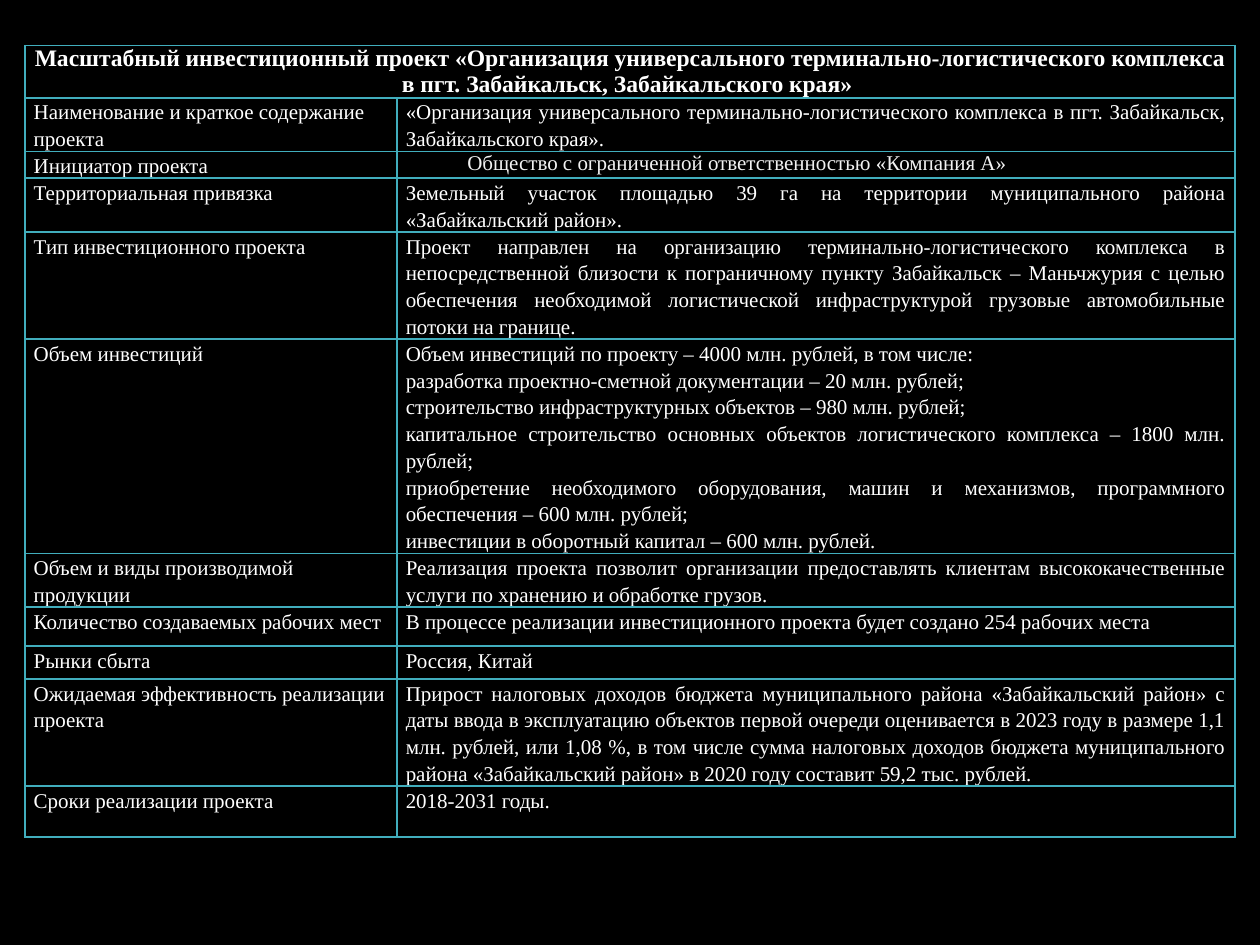
from dataclasses import dataclass

from lxml.etree import SubElement
from pptx import Presentation
from pptx.dml.color import RGBColor
from pptx.enum.text import MSO_ANCHOR as Anchor, PP_ALIGN as Align
from pptx.oxml.ns import qn
from pptx.table import _Cell as Cell
from pptx.util import Cm, Pt


@dataclass(frozen=True)
class Theme:
    background: str = "000000"
    text: str = "FFFFFF"
    soft_text: str = "F2F2F2"
    border: str = "41AEBD"
    font: str = "Times New Roman"
    heading_size: float = 13.5
    body_size: float = 12
    border_width: float = 1
    body_spacing: float = 1.15


THEME = Theme()


@dataclass(frozen=True)
class CellStyle:
    align: Align = Align.LEFT
    size: float = THEME.body_size
    bold: bool = False
    color: str = THEME.text
    spacing: float = THEME.body_spacing
    margin: float = 0.18
    indent: float = 0


@dataclass(frozen=True)
class ProjectRow:
    height: float
    label: str
    details: tuple[str, ...]
    style: CellStyle = CellStyle(align=Align.JUSTIFY)


HEADING = (
    "Масштабный инвестиционный проект «Организация универсального "
    "терминально-логистического комплекса в пгт. Забайкальск, Забайкальского края» "
)
HEADING_HEIGHT = 0.76
HEADING_STYLE = CellStyle(Align.CENTER, THEME.heading_size, True, spacing=1.0, margin=0.2)
LABEL_STYLE = CellStyle()
INITIATOR_STYLE = CellStyle(Align.JUSTIFY, color=THEME.soft_text, spacing=1.0, indent=1.24)
COLUMN_WIDTHS = (7.5, 16.9)

ROWS = (
    ProjectRow(0.61, "Наименование и краткое содержание проекта", (
        "«Организация универсального терминально-логистического комплекса "
        "в пгт. Забайкальск, Забайкальского края».",
    )),
    ProjectRow(0.41, "Инициатор проекта", (
        "Общество с ограниченной ответственностью «Компания А»",
    ), INITIATOR_STYLE),
    ProjectRow(0.79, "Территориальная привязка", (
        "Земельный участок площадью 39 га на территории муниципального района "
        "«Забайкальский район».",
    )),
    ProjectRow(0.66, "Тип инвестиционного проекта", (
        "Проект направлен на организацию терминально-логистического комплекса "
        "в непосредственной близости к пограничному пункту Забайкальск – Маньчжурия "
        "с целью обеспечения необходимой логистической инфраструктурой грузовые "
        "автомобильные потоки на границе.",
    )),
    ProjectRow(0.66, "Объем инвестиций", (
        "Объем инвестиций по проекту – 4000 млн. рублей, в том числе:",
        "разработка проектно-сметной документации – 20 млн. рублей;",
        "строительство инфраструктурных объектов – 980 млн. рублей;",
        "капитальное строительство основных объектов логистического комплекса "
        "– 1800 млн. рублей;",
        "приобретение необходимого оборудования, машин и механизмов, программного "
        "обеспечения – 600 млн. рублей;",
        "инвестиции в оборотный капитал – 600 млн. рублей.",
    )),
    ProjectRow(0.89, "Объем и виды производимой продукции", (
        "Реализация проекта позволит организации предоставлять клиентам "
        "высококачественные услуги по хранению и обработке грузов.",
    )),
    ProjectRow(0.79, "Количество создаваемых рабочих мест", (
        "В процессе реализации инвестиционного проекта будет создано 254 рабочих места",
    )),
    ProjectRow(0.66, "Рынки сбыта", ("Россия, Китай",)),
    ProjectRow(0.66, "Ожидаемая эффективность реализации проекта", (
        "Прирост налоговых доходов бюджета муниципального района «Забайкальский район» "
        "с даты ввода в эксплуатацию объектов первой очереди оценивается в 2023 году "
        "в размере 1,1 млн. рублей, или 1,08 %, в том числе сумма налоговых доходов "
        "бюджета муниципального района «Забайкальский район» в 2020 году составит "
        "59,2 тыс. рублей.",
    )),
    ProjectRow(1.02, "Сроки реализации проекта", ("2018-2031 годы.",)),
)


def apply_format(target: object, values: dict[str, object]) -> None:
    """Set each named attribute of the target."""
    for name, value in values.items():
        setattr(target, name, value)


def draw_borders(cell: Cell) -> None:
    """Outline all four sides of a cell and leave it unfilled."""
    properties = cell._tc.get_or_add_tcPr()
    for side in ("lnL", "lnR", "lnT", "lnB"):
        line = SubElement(properties, qn(f"a:{side}"), w=str(Pt(THEME.border_width)))
        fill = SubElement(line, qn("a:solidFill"))
        SubElement(fill, qn("a:srgbClr"), val=THEME.border)
    cell.fill.background()


def write_cell(cell: Cell, lines: tuple[str, ...], style: CellStyle) -> None:
    """Fill a cell with formatted paragraphs."""
    apply_format(cell, {
        "margin_left": Cm(style.margin), "margin_right": Cm(style.margin),
        "margin_top": 0, "margin_bottom": 0, "vertical_anchor": Anchor.TOP,
    })
    cell.text = "\n".join(lines)
    for paragraph in cell.text_frame.paragraphs:
        apply_format(paragraph, {"alignment": style.align, "line_spacing": style.spacing})
        if style.indent:
            paragraph._p.get_or_add_pPr().set("indent", str(Cm(style.indent)))
        for run in paragraph.runs:
            apply_format(run.font, {
                "name": THEME.font, "size": Pt(style.size), "bold": style.bold,
            })
            run.font.color.rgb = RGBColor.from_string(style.color)


def main() -> None:
    """Build the investment project slide."""
    deck = Presentation()
    apply_format(deck, {"slide_width": Cm(25.4), "slide_height": Cm(19.05)})
    slide = deck.slides.add_slide(deck.slide_layouts.get_by_name("Blank"))
    backdrop = slide.background.fill
    backdrop.solid()
    backdrop.fore_color.rgb = RGBColor.from_string(THEME.background)

    frame = slide.shapes.add_table(
        len(ROWS) + 1, len(COLUMN_WIDTHS),
        Cm(0.5), Cm(0.92), Cm(sum(COLUMN_WIDTHS)), Cm(16.92),
    )
    passport = frame.table
    apply_format(passport, {"first_row": False, "horz_banding": False})
    for column, width in zip(passport.columns, COLUMN_WIDTHS):
        column.width = Cm(width)
    heights = (HEADING_HEIGHT, *(row.height for row in ROWS))
    for table_row, height in zip(passport.rows, heights):
        table_row.height = Cm(height)
    frame.height = Cm(16.92)

    for cell in passport.iter_cells():
        draw_borders(cell)
    passport.cell(0, 0).merge(passport.cell(0, 1))
    write_cell(passport.cell(0, 0), (HEADING,), HEADING_STYLE)
    for index, row in enumerate(ROWS, start=1):
        write_cell(passport.cell(index, 0), (row.label,), LABEL_STYLE)
        write_cell(passport.cell(index, 1), row.details, row.style)

    deck.save("out.pptx")


if __name__ == "__main__":
    main()
